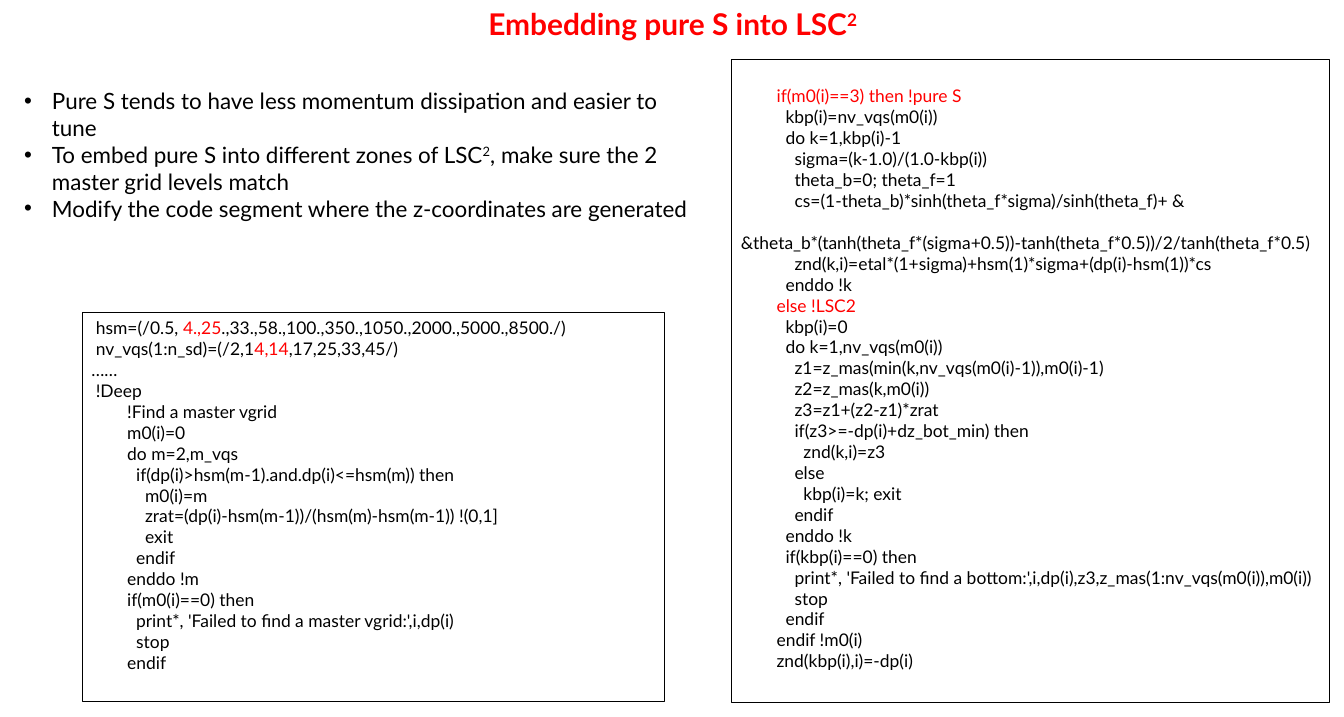
import pptx
import pptx.util
import pptx.dml.color
import pptx.enum.shapes
import pptx.enum.text

Cm = pptx.util.Cm
Pt = pptx.util.Pt
RED = pptx.dml.color.RGBColor(0xFF, 0x00, 0x00)
BLACK = pptx.dml.color.RGBColor(0x00, 0x00, 0x00)
FONT = "Lato"
CODE_SIZE = 14
CODE_LINE = 16.8
SPACE_WIDTH = 0.127
INSET = 0.13

TITLE = ["Embedding pure S into LSC", "2"]
POINTS = [
    ["Pure S tends to have less momentum dissipation and easier to tune"],
    ["To embed pure S into different zones of LSC", "2",
     ", make sure the 2 master grid levels match"],
    ["Modify the code segment where the z-coordinates are generated"],
]
MASTER_GRID_CODE = [
    (1, "hsm=(/0.5, |4.,25|.,33.,58.,100.,350.,1050.,2000.,5000.,8500./)"),
    (1, "nv_vqs(1:n_sd)=(/2,1|4,14|,17,25,33,45/)"),
    (0, "……"),
    (1, "!Deep"),
    (8, "!Find a master vgrid"),
    (8, "m0(i)=0"),
    (8, "do m=2,m_vqs"),
    (10, "if(dp(i)>hsm(m-1).and.dp(i)<=hsm(m)) then"),
    (12, "m0(i)=m"),
    (12, "zrat=(dp(i)-hsm(m-1))/(hsm(m)-hsm(m-1)) !(0,1]"),
    (12, "exit"),
    (10, "endif"),
    (8, "enddo !m"),
    (8, "if(m0(i)==0) then"),
    (10, "print*, 'Failed to find a master vgrid:',i,dp(i)"),
    (10, "stop"),
    (8, "endif"),
]
COORDINATE_CODE = [
    (8, "|if(m0(i)==3) then !pure S|"),
    (10, "kbp(i)=nv_vqs(m0(i))"),
    (10, "do k=1,kbp(i)-1"),
    (12, "sigma=(k-1.0)/(1.0-kbp(i))"),
    (12, "theta_b=0; theta_f=1"),
    (12, "cs=(1-theta_b)*sinh(theta_f*sigma)/sinh(theta_f)+ &"),
    (0, "&theta_b*(tanh(theta_f*(sigma+0.5))-tanh(theta_f*0.5))/2/tanh(theta_f*0.5)"),
    (12, "znd(k,i)=etal*(1+sigma)+hsm(1)*sigma+(dp(i)-hsm(1))*cs"),
    (10, "enddo !k"),
    (8, "|else !LSC2|"),
    (10, "kbp(i)=0"),
    (10, "do k=1,nv_vqs(m0(i))"),
    (12, "z1=z_mas(min(k,nv_vqs(m0(i)-1)),m0(i)-1)"),
    (12, "z2=z_mas(k,m0(i))"),
    (12, "z3=z1+(z2-z1)*zrat"),
    (12, "if(z3>=-dp(i)+dz_bot_min) then"),
    (14, "znd(k,i)=z3"),
    (12, "else"),
    (14, "kbp(i)=k; exit"),
    (12, "endif"),
    (10, "enddo !k"),
    (10, "if(kbp(i)==0) then"),
    (12, "print*, 'Failed to find a bottom:',i,dp(i),z3,z_mas(1:nv_vqs(m0(i)),m0(i))"),
    (12, "stop"),
    (10, "endif"),
    (8, "endif !m0(i)"),
    (8, "znd(kbp(i),i)=-dp(i)"),
]


def place(part, box):
    part.left, part.top, part.width, part.height = (Cm(length) for length in box)


def add_run(paragraph, text, size, color, bold=False, raised=False):
    run = paragraph.add_run()
    run.text = text
    run.font.name = FONT
    run.font.size = Pt(size)
    run.font.color.rgb = color
    run.font.bold = bold
    if raised:
        run._r.get_or_add_rPr().set("baseline", "30000")


def add_raised_runs(paragraph, parts, size, color, bold=False):
    for number, part in enumerate(parts):
        add_run(paragraph, part, size, color, bold, raised=number % 2 == 1)


def set_indent(paragraph, margin, first=0):
    properties = paragraph._p.get_or_add_pPr()
    properties.set("marL", str(int(Cm(margin))))
    properties.set("indent", str(int(Cm(first))))


def fill_title(slide, box):
    title = slide.shapes.title
    place(title, box)
    frame = title.text_frame
    frame.auto_size = pptx.enum.text.MSO_AUTO_SIZE.NONE
    frame.vertical_anchor = pptx.enum.text.MSO_ANCHOR.BOTTOM
    frame.margin_top = frame.margin_bottom = Cm(0.18)
    heading = frame.paragraphs[0]
    heading.alignment = pptx.enum.text.PP_ALIGN.CENTER
    add_raised_runs(heading, TITLE, 24, RED, bold=True)


def fill_points(slide, box):
    body = slide.placeholders[1]
    place(body, box)
    frame = body.text_frame
    frame.auto_size = pptx.enum.text.MSO_AUTO_SIZE.NONE
    frame.vertical_anchor = pptx.enum.text.MSO_ANCHOR.TOP
    for number, parts in enumerate(POINTS):
        point = frame.add_paragraph() if number else frame.paragraphs[0]
        point.space_before = Pt(0)
        set_indent(point, 0.79, -0.79)
        add_raised_runs(point, parts, 18, BLACK)


def add_code(slide, box, code, top_lines=0):
    panel = slide.shapes.add_shape(
        pptx.enum.shapes.MSO_SHAPE.RECTANGLE, *(Cm(length) for length in box))
    panel.shadow.inherit = False
    panel.fill.background()
    panel.line.color.rgb = BLACK
    panel.line.width = Pt(0.75)
    frame = panel.text_frame
    frame.word_wrap = True
    frame.vertical_anchor = pptx.enum.text.MSO_ANCHOR.TOP
    frame.margin_top = Cm(INSET) + Pt(CODE_LINE * top_lines)
    for number, (spaces, text) in enumerate(code):
        statement = frame.add_paragraph() if number else frame.paragraphs[0]
        statement.alignment = pptx.enum.text.PP_ALIGN.LEFT
        set_indent(statement, spaces * SPACE_WIDTH)
        if text.startswith("&"):
            statement.space_before = Pt(CODE_LINE)
        for position, part in enumerate(text.split("|")):
            if part:
                add_run(statement, part, CODE_SIZE, RED if position % 2 else BLACK)


def main():
    deck = pptx.Presentation()
    deck.slide_width, deck.slide_height = Cm(38.1), Cm(20.32)
    slide = deck.slides.add_slide(deck.slide_layouts[1])
    fill_title(slide, (2.84, 0.23, 32.46, 1.12))
    fill_points(slide, (0.43, 2.34, 19.84, 4.11))
    add_code(slide, (20.75, 1.7, 16.94, 18.21), COORDINATE_CODE, top_lines=1)
    add_code(slide, (2.34, 8.86, 16.51, 11.02), MASTER_GRID_CODE)
    deck.save("out.pptx")


if __name__ == "__main__":
    main()
